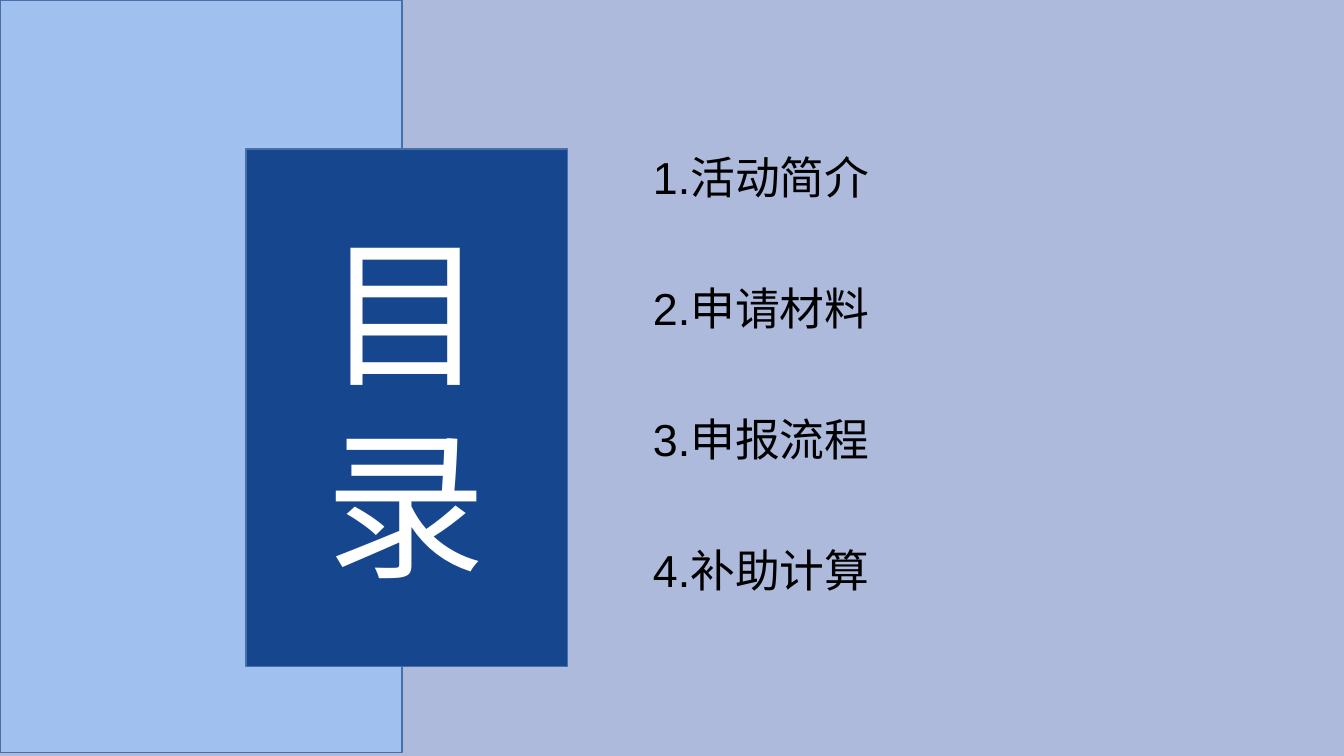
from lxml import etree
from pptx import Presentation
from pptx import util as u
from pptx.dml import color
from pptx.enum import shapes, text
from pptx.oxml import ns

TOPICS = ["1.活动简介", "2.申请材料", "3.申报流程", "4.补助计算"]


def paint(target, hex_colour):
    """Give a fill or a background fill one solid colour."""
    target.solid()
    target.fore_color.rgb = color.RGBColor.from_string(hex_colour)


def place(shape, left, top, width, height):
    shape.left, shape.top = u.Cm(left), u.Cm(top)
    shape.width, shape.height = u.Cm(width), u.Cm(height)


def add_panel(slide, position, hex_colour, depth):
    """Add a rectangle at the given depth, behind the placeholders."""
    panel = slide.shapes.add_shape(
        shapes.MSO_SHAPE.RECTANGLE, *[u.Cm(length) for length in position])
    panel.shadow.inherit = False
    paint(panel.fill, hex_colour)
    paint(panel.line.fill, "476FAA")
    panel.line.width = u.Pt(1)
    slide.shapes.element.insert(2 + depth, panel.element)


def write_lines(placeholder, lines, font_name, size, hex_colour, line_height, gap=0):
    """Fill a placeholder with plain, left-aligned lines of text."""
    frame = placeholder.text_frame
    frame.text = "\n".join(lines)
    frame.word_wrap = True
    frame.auto_size = text.MSO_AUTO_SIZE.NONE
    frame.vertical_anchor = text.MSO_ANCHOR.TOP
    for index, paragraph in enumerate(frame.paragraphs):
        paragraph.alignment = text.PP_ALIGN.LEFT
        paragraph.line_spacing = u.Pt(line_height)
        paragraph.space_before = u.Pt(gap if index else 0)
        paragraph.space_after = u.Pt(0)
        properties = paragraph._p.get_or_add_pPr()
        properties.set("marL", "0")
        properties.set("indent", "0")
        etree.SubElement(properties, ns.qn("a:buNone"))
        for run in paragraph.runs:
            run.font.name = font_name
            run.font.size = u.Pt(size)
            paint(run.font.fill, hex_colour)


def main():
    presentation = Presentation()
    presentation.slide_width, presentation.slide_height = u.Cm(33.87), u.Cm(19.05)
    slide = presentation.slides.add_slide(presentation.slide_layouts[1])
    paint(slide.background.fill, "AEBADC")

    add_panel(slide, (0, 0, 10.13, 18.97), "A0C0F0", 0)
    add_panel(slide, (6.2, 3.76, 8.1, 13.03), "16468D", 1)

    title, topics = slide.placeholders
    place(title, 7.95, 5.26, 5.26, 10.08)
    write_lines(title, ["目录"], "Noto Sans CJK SC", 115, "FFFFFF", 137)
    place(topics, 16.2, 3.63, 16.84, 11.5)
    write_lines(topics, TOPICS, "Arial", 32, "000000", 39, 54.4)

    presentation.save("out.pptx")


if __name__ == "__main__":
    main()
